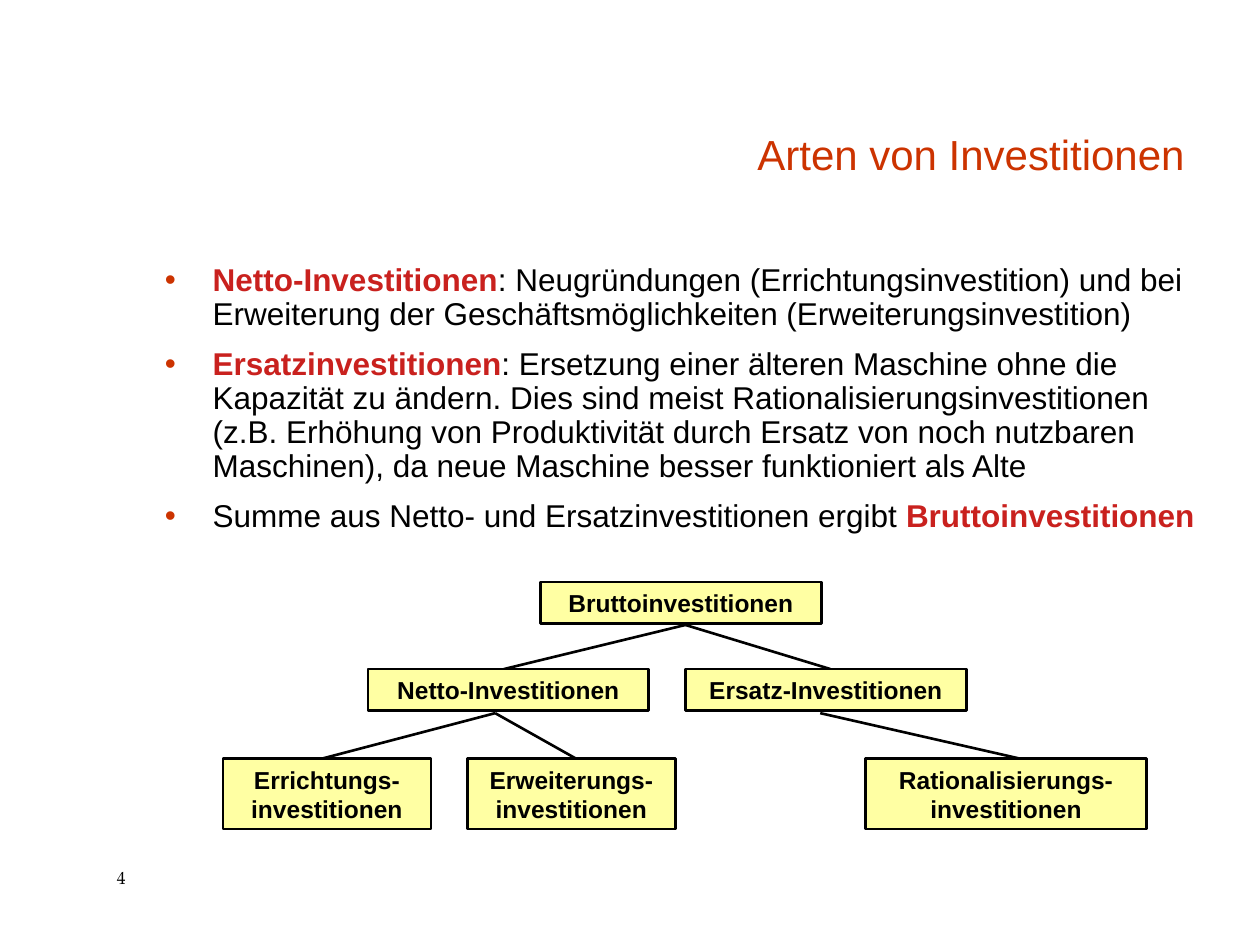
from typing import NamedTuple

import pptx
import pptx.dml.color
import pptx.enum.shapes
import pptx.enum.text
import pptx.oxml.ns
import pptx.util
from lxml import etree
from pptx.util import Inches

Align = pptx.enum.text.PP_ALIGN
Anchor = pptx.enum.text.MSO_ANCHOR

BLACK, RED, ORANGE, YELLOW = "000000", "C9211E", "CC3300", "FFFFA3"
LINE_WIDTH = pptx.util.Pt(1.5)
ROOT_TOP, GROUP_TOP, LEAF_TOP = 4.62, 5.31, 6.02
WIDE, NARROW = 2.23, 1.65
SINGLE, DOUBLE = 0.33, 0.56
INDENT = 0.38


class Node(NamedTuple):
    label: str
    left: float
    top: float
    width: float
    height: float


class Branch(NamedTuple):
    start_x: float
    start_y: float
    end_x: float
    end_y: float


class Span(NamedTuple):
    text: str
    is_key_term: bool = False


NODES = [
    Node("Bruttoinvestitionen", 4.29, ROOT_TOP, WIDE, SINGLE),
    Node("Netto-Investitionen", 2.92, GROUP_TOP, WIDE, SINGLE),
    Node("Ersatz-Investitionen", 5.44, GROUP_TOP, WIDE, SINGLE),
    Node("Errichtungs-\vinvestitionen", 1.77, LEAF_TOP, NARROW, DOUBLE),
    Node("Erweiterungs-investitionen", 3.71, LEAF_TOP, NARROW, DOUBLE),
    Node("Rationalisierungs-investitionen", 6.87, LEAF_TOP, WIDE, DOUBLE),
]

BRANCHES = [
    Branch(5.44, 4.96, 6.59, GROUP_TOP),
    Branch(5.44, 4.96, 4.00, GROUP_TOP),
    Branch(3.93, 5.66, 2.56, LEAF_TOP),
    Branch(3.93, 5.66, 4.57, LEAF_TOP),
    Branch(6.51, 5.66, 8.09, LEAF_TOP),
]

DEFINITIONS = [
    [
        Span("Netto-Investitionen", True),
        Span(": Neugründungen (Errichtungsinvestition) und bei Erweiterung der "
             "Geschäftsmöglichkeiten (Erweiterungsinvestition)"),
    ],
    [
        Span("Ersatzinvestitionen", True),
        Span(": Ersetzung einer älteren Maschine ohne die Kapazität zu ändern. "
             "Dies sind meist Rationalisierungsinvestitionen (z.B. Erhöhung von "
             "Produktivität durch Ersatz von noch nutzbaren Maschinen), da neue "
             "Maschine besser funktioniert als Alte"),
    ],
    [
        Span("Summe aus Netto- und Ersatzinvestitionen ergibt "),
        Span("Bruttoinvestitionen", True),
    ],
]


def rgb(color: str) -> pptx.dml.color.RGBColor:
    return pptx.dml.color.RGBColor.from_string(color)


def style_font(font, size: float, color: str = BLACK, bold: bool = False,
               name: str = "Arial") -> None:
    font.name = name
    font.size = pptx.util.Pt(size)
    font.bold = bold
    font.color.rgb = rgb(color)


def add_text_frame(slide, left: float, top: float, width: float, height: float):
    box = slide.shapes.add_textbox(Inches(left), Inches(top),
                                   Inches(width), Inches(height))
    box.text_frame.word_wrap = True
    return box.text_frame


def add_bullet(paragraph, color: str) -> None:
    """Give the paragraph a coloured bullet with a hanging indent."""
    properties = paragraph._p.get_or_add_pPr()
    properties.set("marL", str(Inches(INDENT)))
    properties.set("indent", str(-Inches(INDENT)))
    qn = pptx.oxml.ns.qn
    bullet_color = etree.SubElement(properties, qn("a:buClr"))
    etree.SubElement(bullet_color, qn("a:srgbClr"), val=color)
    etree.SubElement(properties, qn("a:buFont"), typeface="Arial")
    etree.SubElement(properties, qn("a:buChar"), char="•")


def add_definitions(slide) -> None:
    frame = add_text_frame(slide, 1.21, 2.05, 8.43, 2.28)
    for index, spans in enumerate(DEFINITIONS):
        paragraph = frame.add_paragraph() if index else frame.paragraphs[0]
        add_bullet(paragraph, ORANGE)
        paragraph.line_spacing = 0.9
        paragraph.space_before = pptx.util.Pt(9 if index else 0)
        for span in spans:
            run = paragraph.add_run()
            run.text = span.text
            style_font(run.font, 18, RED if span.is_key_term else BLACK,
                       span.is_key_term)


def add_branch(slide, branch: Branch) -> None:
    connector = slide.shapes.add_connector(
        pptx.enum.shapes.MSO_CONNECTOR.STRAIGHT, *map(Inches, branch))
    connector.line.color.rgb = rgb(BLACK)
    connector.line.width = LINE_WIDTH
    etree.SubElement(connector._element.spPr, pptx.oxml.ns.qn("a:effectLst"))


def add_node(slide, node: Node) -> None:
    box = slide.shapes.add_shape(
        pptx.enum.shapes.MSO_SHAPE.RECTANGLE, Inches(node.left),
        Inches(node.top), Inches(node.width), Inches(node.height))
    box.shadow.inherit = False
    box.fill.solid()
    box.fill.fore_color.rgb = rgb(YELLOW)
    box.line.color.rgb = rgb(BLACK)
    box.line.width = LINE_WIDTH
    frame = box.text_frame
    frame.word_wrap = True
    frame.vertical_anchor = Anchor.TOP
    frame.text = node.label
    paragraph = frame.paragraphs[0]
    paragraph.alignment = Align.CENTER
    for run in paragraph.runs:
        style_font(run.font, 14, bold=True)


def main() -> None:
    presentation = pptx.Presentation()
    presentation.slide_width = Inches(10)
    presentation.slide_height = Inches(7.5)
    slide = presentation.slides.add_slide(presentation.slide_layouts[6])

    page_number = add_text_frame(slide, 0.83, 6.83, 0.67, 0.29)
    page_number.text = "4"
    style_font(page_number.paragraphs[0].runs[0].font, 10,
               name="TeX Gyre Pagella")

    title = add_text_frame(slide, 2.09, 0.42, 7.41, 1.05)
    title.vertical_anchor = Anchor.BOTTOM
    title.text = "Arten von Investitionen"
    title.paragraphs[0].alignment = Align.RIGHT
    title.paragraphs[0].line_spacing = 0.9
    style_font(title.paragraphs[0].runs[0].font, 24, ORANGE)

    add_definitions(slide)
    for branch in BRANCHES:
        add_branch(slide, branch)
    for node in NODES:
        add_node(slide, node)

    presentation.save("out.pptx")


if __name__ == "__main__":
    main()
